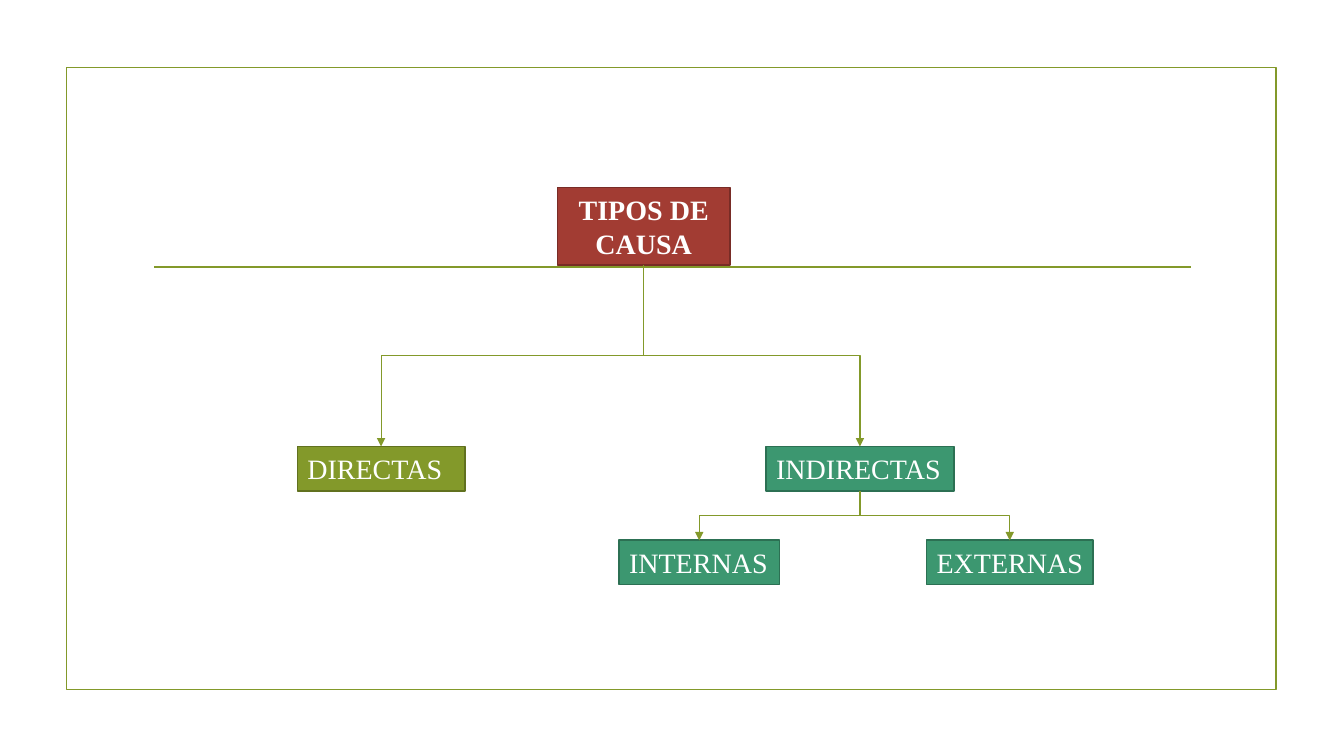
from lxml import etree
from pptx import Presentation
from pptx.dml.color import RGBColor
from pptx.enum import shapes, text
from pptx.oxml import ns
from pptx.util import Inches, Pt

# Content: label, box (left, top, width, height), fill, outline, wrap
TITLE = "TIPOS DE CAUSA"
TITLE_BOX = (5.53, 1.86, 1.71, 0.77)
FRAME = (0.66, 0.67, 12, 6.17)
RULE = (1.53, 2.65, 11.81, 2.65)
OLIVE = "83992A"
CAUSES = [
    ("DIRECTAS", (2.95, 4.43, 1.66, 0.44), OLIVE, "61711F", True),
    ("INDIRECTAS", (7.6, 4.43, 1.86, 0.44), "3C9770", "2C7053", False),
    ("INTERNAS", (6.14, 5.36, 1.59, 0.44), "3C9770", "2C7053", False),
    ("EXTERNAS", (9.19, 5.36, 1.65, 0.44), "3C9770", "2C7053", False),
]
BRANCHES = [
    (TITLE, "DIRECTAS"),
    (TITLE, "INDIRECTAS"),
    ("INDIRECTAS", "INTERNAS"),
    ("INDIRECTAS", "EXTERNAS"),
]
LABEL_FONT = {"name": "Times New Roman", "size": Pt(20)}
BOTTOM, TOP = 2, 0  # connection sites of a rectangle


def color(value):
    return RGBColor.from_string(value)


def place(box, position):
    for side, length in zip(("left", "top", "width", "height"), position):
        setattr(box, side, Inches(length))


def set_line(shape, value, width=1.25):
    shape.line.color.rgb = color(value)
    shape.line.width = Pt(width)


def style_box(box, label, fill, outline, wrap, align, bold=False):
    box.fill.solid()
    box.fill.fore_color.rgb = color(fill)
    set_line(box, outline)
    frame = box.text_frame
    frame.text = label
    frame.word_wrap = wrap
    frame.vertical_anchor = text.MSO_ANCHOR.TOP
    para = frame.paragraphs[0]
    para.alignment = align
    font = para.runs[0].font
    for name, value in {**LABEL_FONT, "bold": bold}.items():
        setattr(font, name, value)
    font.color.rgb = color("FFFFFF")


def add_line(page, kind, ends, width):
    line = page.shapes.add_connector(kind, *map(Inches, ends))
    set_line(line, OLIVE, width)
    etree.SubElement(line._element.spPr, ns.qn("a:effectLst"))
    return line


def add_branch(page, parent, child):
    line = add_line(page, shapes.MSO_CONNECTOR.ELBOW, (0, 0, 1, 1), 0.75)
    line.begin_connect(parent, BOTTOM)
    line.end_connect(child, TOP)
    # An elbow leaves sideways, so turn it to leave downwards
    start_x = parent.left + parent.width // 2
    start_y = parent.top + parent.height
    end_x = child.left + child.width // 2
    drop, reach = child.top - start_y, abs(end_x - start_x)
    line.left = (start_x + end_x - drop) // 2
    line.top = (start_y + child.top - reach) // 2
    line.width, line.height = drop, reach
    to_right = end_x > start_x
    turn = {"rot": str((270 if to_right else 90) * 60000),
            "flipH": str(int(to_right)), "flipV": "0"}
    for name, value in turn.items():
        line._element.spPr.xfrm.set(name, value)
    outline = line.line._get_or_add_ln()
    etree.SubElement(outline, ns.qn("a:tailEnd"), type="triangle")


def main():
    deck = Presentation()
    deck.slide_width, deck.slide_height = Inches(13.33), Inches(7.5)
    page = deck.slides.add_slide(deck.slide_layouts[5])

    # Title box, kept at its own height
    title = page.shapes.title
    place(title, TITLE_BOX)
    style_box(title, TITLE, "A23C33", "782C26", True, text.PP_ALIGN.CENTER, True)
    title.text_frame.auto_size = text.MSO_AUTO_SIZE.NONE

    # Frame and rule
    rectangle = shapes.MSO_SHAPE.RECTANGLE
    border = page.shapes.add_shape(rectangle, *map(Inches, FRAME))
    border.shadow.inherit = False
    border.fill.background()
    set_line(border, OLIVE)
    add_line(page, shapes.MSO_CONNECTOR.STRAIGHT, RULE, 1.25)

    # Cause boxes
    boxes = {TITLE: title}
    for label, position, fill, outline, wrap in CAUSES:
        box = page.shapes.add_shape(rectangle, *map(Inches, position))
        box.shadow.inherit = False
        style_box(box, label, fill, outline, wrap, text.PP_ALIGN.LEFT)
        box.text_frame.auto_size = text.MSO_AUTO_SIZE.SHAPE_TO_FIT_TEXT
        boxes[label] = box

    # Branches
    for parent, child in BRANCHES:
        add_branch(page, boxes[parent], boxes[child])

    deck.save("out.pptx")


if __name__ == "__main__":
    main()
